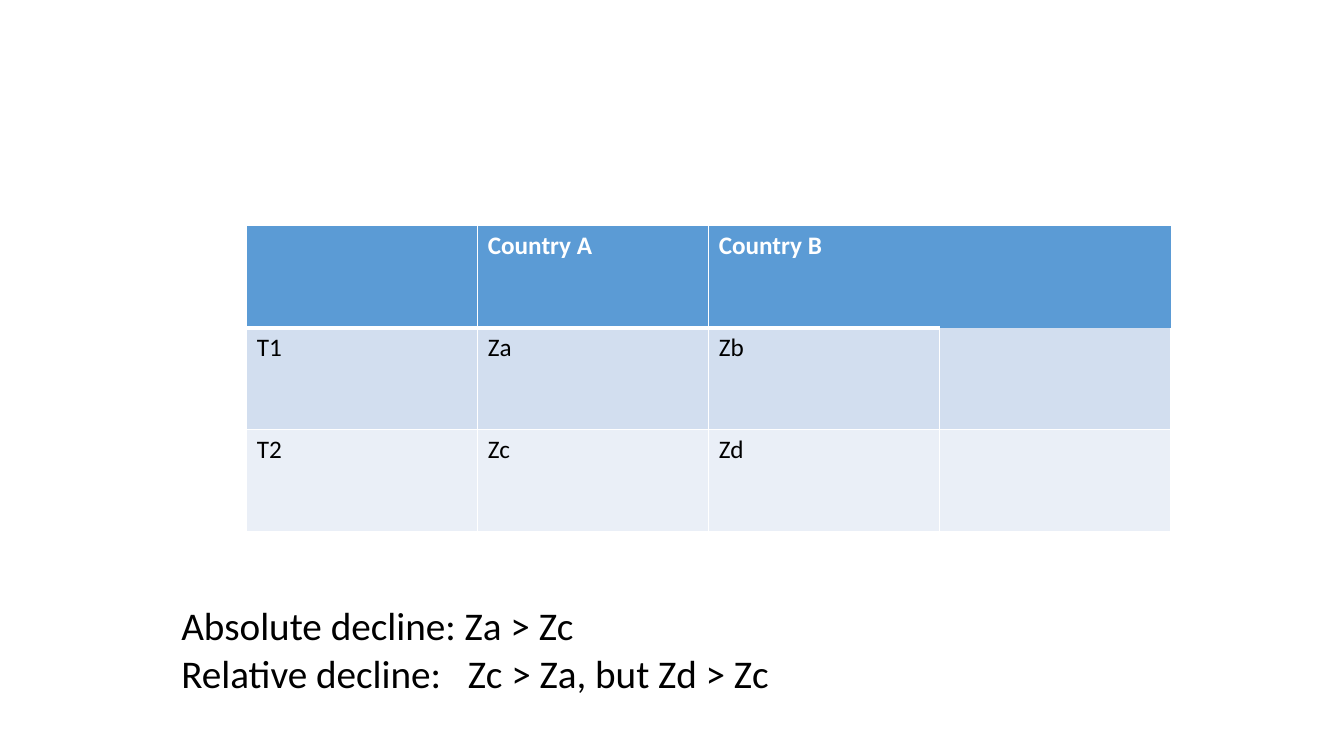
from dataclasses import dataclass

from lxml import etree
from pptx import Presentation
from pptx.dml.color import RGBColor
from pptx.enum import text
from pptx.oxml import ns
from pptx.util import Cm, Pt


@dataclass(frozen=True)
class Theme:
    font: str = "Calibri"
    header: str = "5B9BD5"
    bands: tuple = ("D2DEEF", "EAEFF7")
    light: str = "FFFFFF"
    dark: str = "000000"
    cell_size: int = 18
    note_size: int = 28
    thin: int = 1
    thick: int = 3


THEME = Theme()

ROWS = [
    ["", "Country A", "Country B", ""],
    ["T1", "Za", "Zb", ""],
    ["T2", "Zc", "Zd", ""],
]
NOTES = ["Absolute decline: Za > Zc", "Relative decline:\tZc > Za, but Zd > Zc"]


def write(p, content, *, size, color=THEME.dark, bold=False):
    r = p.add_run()
    r.text = content
    r.font.name = THEME.font
    r.font.size = Pt(size)
    r.font.bold = bold
    r.font.color.rgb = RGBColor.from_string(color)


def set_borders(cell, **widths):
    tcPr = cell._tc.get_or_add_tcPr()
    for side in "LRTB":
        ln = etree.SubElement(tcPr, ns.qn(f"a:ln{side}"))
        width = widths.get(side, THEME.thin)
        ln.set("w", str(Pt(width)))
        if width:
            fill = etree.SubElement(ln, ns.qn("a:solidFill"))
            etree.SubElement(fill, ns.qn("a:srgbClr")).set("val", THEME.light)
        else:
            etree.SubElement(ln, ns.qn("a:noFill"))


def border_widths(row, col, last_col):
    if row == 0 and col == last_col:
        return dict.fromkeys("LRTB", 0)
    if row == 0:
        return {"B": THEME.thick, "R": 0 if col == last_col - 1 else THEME.thin}
    if row == 1:
        return {"T": 0 if col == last_col else THEME.thick}
    return {}


def add_table(s, rows, *, left, top, col_width, row_height):
    n_rows, n_cols = len(rows), len(rows[0])
    table = s.shapes.add_table(n_rows, n_cols, left, top,
                               col_width * n_cols, row_height * n_rows).table
    for column in table.columns:
        column.width = col_width
    for i, row in enumerate(rows):
        table.rows[i].height = row_height
        header = i == 0
        for j, content in enumerate(row):
            cell = table.cell(i, j)
            set_borders(cell, **border_widths(i, j, n_cols - 1))
            cell.fill.solid()
            color = THEME.header if header else THEME.bands[(i - 1) % 2]
            cell.fill.fore_color.rgb = RGBColor.from_string(color)
            if content:
                write(cell.text_frame.paragraphs[0], content, size=THEME.cell_size,
                      color=THEME.light if header else THEME.dark, bold=header)


def add_tab_stop(p, position):
    tabs = etree.SubElement(p._p.get_or_add_pPr(), ns.qn("a:tabLst"))
    etree.SubElement(tabs, ns.qn("a:tab"), pos=str(position), algn="l")


def add_notes(s, lines, *, left, top, width, height, tab):
    tf = s.shapes.add_textbox(left, top, width, height).text_frame
    tf.word_wrap = False
    tf.auto_size = text.MSO_AUTO_SIZE.SHAPE_TO_FIT_TEXT
    for i, line in enumerate(lines):
        p = tf.add_paragraph() if i else tf.paragraphs[0]
        add_tab_stop(p, tab)
        before, *after = line.split("\t")
        write(p, "\t".join([before, *after]), size=THEME.note_size)


def main():
    prs = Presentation()
    prs.slide_width, prs.slide_height = Cm(33.87), Cm(19.05)
    s = prs.slides.add_slide(prs.slide_layouts[6])
    add_table(s, ROWS, left=Cm(6.22), top=Cm(5.69),
              col_width=Cm(5.82), row_height=Cm(2.57))
    add_notes(s, NOTES, left=Cm(4.32), top=Cm(15.04),
              width=Cm(15.49), height=Cm(2.64), tab=Cm(7.22))
    prs.save("out.pptx")


if __name__ == "__main__":
    main()
